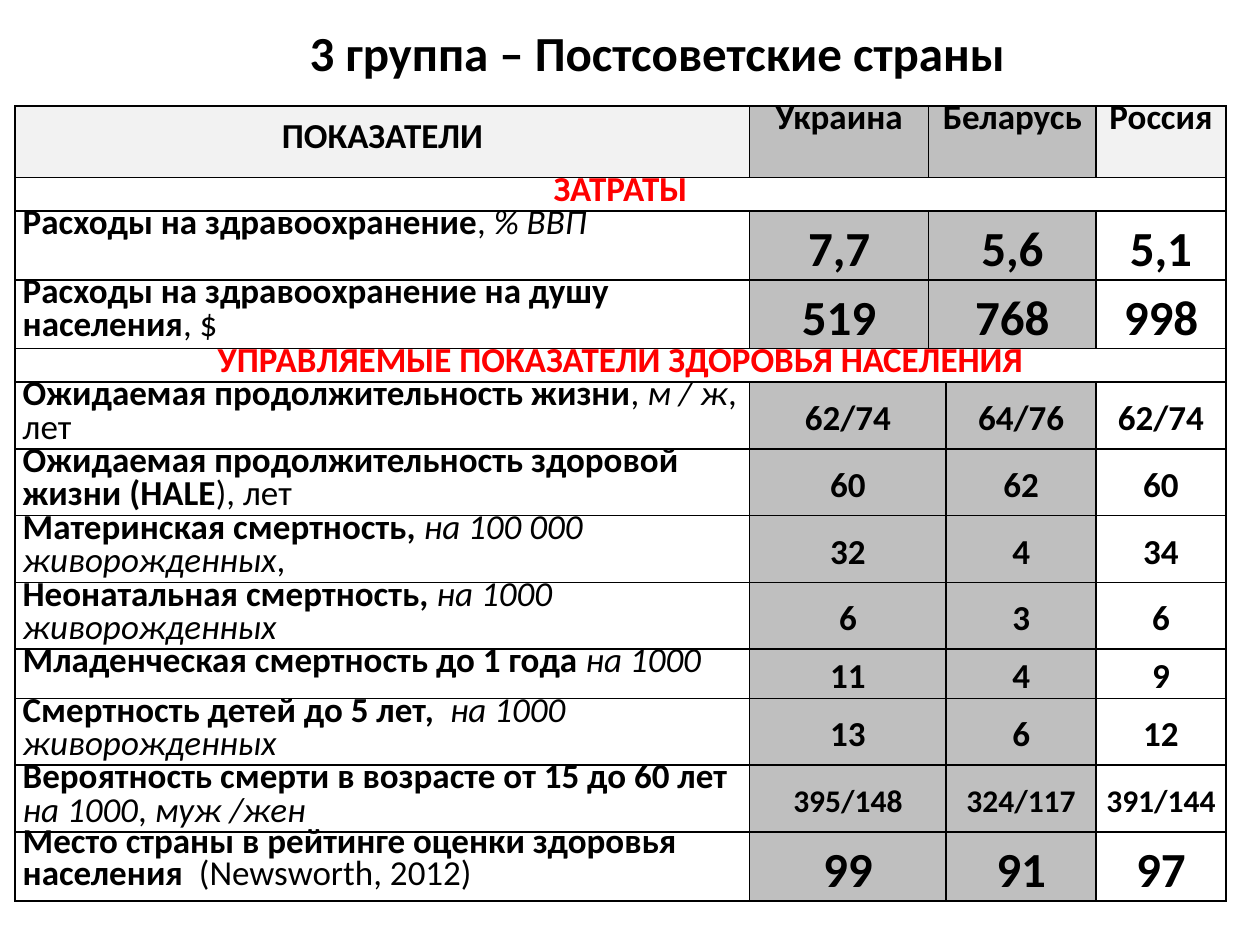
from lxml import etree
from pptx import Presentation
from pptx.dml.color import RGBColor
from pptx.enum.text import MSO_ANCHOR, PP_ALIGN
from pptx.oxml.ns import qn
from pptx.util import Inches, Pt

LEFT, MID = PP_ALIGN.LEFT, PP_ALIGN.CENTER
TOP, HALF = MSO_ANCHOR.TOP, MSO_ANCHOR.MIDDLE
BLACK = RGBColor(0, 0, 0)
RED = RGBColor(255, 0, 0)
WHITE = RGBColor(255, 255, 255)
PALE = RGBColor(0xF2, 0xF2, 0xF2)
GRAY = RGBColor(0xBF, 0xBF, 0xBF)
FILLS = (GRAY, GRAY, WHITE)
FACE = "Calibri"
COLS = (5.83, 1.42, 0.14, 1.19, 1.03)
HEADS = ("Украина", "Беларусь", "Россия")

COSTS = [
    (0.54, 28, [("Расходы на здравоохранение", "b"), (", ", ""), ("% ВВП", "i")],
     ("7,7", "5,6", "5,1")),
    (0.54, 28, [("Расходы на здравоохранение на душу населения", "b"), (", $", "")],
     ("519", "768", "998")),
]
HEALTH = [
    (0.53, 20, [("Ожидаемая продолжительность жизни", "b"), (", ", ""),
                ("м / ж", "i"), (", лет", "")],
     ("62/74", "64/76", "62/74")),
    (0.53, 20, [("Ожидаемая продолжительность здоровой жизни (HALE", "b"),
                ("), лет", "")],
     ("60", "62", "60")),
    (0.53, 20, [("Материнская смертность, ", "b"),
                ("на 100 000 живорожденных", "i"), (",", "")],
     ("32", "4", "34")),
    (0.53, 20, [("Неонатальная смертность, ", "b"), ("на 1000 живорожденных", "i")],
     ("6", "3", "6")),
    (0.38, 20, [("Младенческая смертность до 1 года ", "b"), ("на 1000", "i")],
     ("11", "4", "9")),
    (0.53, 20, [("Смертность детей до 5 лет,  ", "b"), ("на 1000 живорожденных", "i")],
     ("13", "6", "12")),
    (0.53, 18, [("Вероятность смерти в возрасте от 15 до 60 лет ", "b"),
                ("на 1000", "i"), (", ", ""), ("муж /жен", "i")],
     ("395/148", "324/117", "391/144")),
    (0.54, 28, [("Место страны в рейтинге оценки здоровья населения  ", "b"),
                ("(Newsworth, 2012)", "")],
     ("99", "91", "97")),
]


def style(font, size, color=BLACK):
    """Set the face, size and colour of a font."""
    font.name, font.size = FACE, Pt(size)
    font.color.rgb = color


def edge(cell):
    """Draw a thin black line on every side of a cell."""
    props = cell._tc.get_or_add_tcPr()
    for side in ("lnL", "lnR", "lnT", "lnB"):
        line = etree.SubElement(props, qn(f"a:{side}"), w=str(Pt(1)))
        fill = etree.SubElement(line, qn("a:solidFill"))
        etree.SubElement(fill, qn("a:srgbClr"), val=str(BLACK))


def write(cell, runs, size=20, color=BLACK, align=MID, space=Pt(19),
          anchor=TOP, pad=0.06):
    """Fill a cell with styled runs."""
    cell.margin_left = cell.margin_right = Inches(pad)
    cell.margin_top = cell.margin_bottom = 0
    cell.vertical_anchor = anchor
    para = cell.text_frame.paragraphs[0]
    para.alignment, para.line_spacing = align, space
    style(para.font, size, color)
    for text, kind in runs:
        run = para.add_run()
        run.text = text
        style(run.font, size, color)
        run.font.bold, run.font.italic = kind == "b", kind == "i"


def paint(cell, color):
    """Give a cell a solid fill."""
    cell.fill.solid()
    cell.fill.fore_color.rgb = color


def head(table):
    """Write the top row."""
    write(table.cell(0, 0), [("ПОКАЗАТЕЛИ", "b")], anchor=HALF)
    paint(table.cell(0, 0), PALE)
    table.cell(0, 2).merge(table.cell(0, 3))
    for col, text, color in zip((1, 2, 4), HEADS, (GRAY, GRAY, PALE)):
        write(table.cell(0, col), [(text, "b")])
        paint(table.cell(0, col), color)


def band(table, row, text):
    """Write a red heading across the whole table."""
    table.cell(row, 0).merge(table.cell(row, len(COLS) - 1))
    write(table.cell(row, 0), [(text, "b")], color=RED)


def block(table, start, data, spots, pair):
    """Write rows of a label and three values, joining a pair of columns."""
    for row, (_, size, label, values) in enumerate(data, start):
        space = Pt(18) if row == len(table.rows) - 1 else Pt(19)
        write(table.cell(row, 0), label, align=LEFT, space=space)
        table.cell(row, pair[0]).merge(table.cell(row, pair[1]))
        for col, text, color in zip(spots, values, FILLS):
            cell = table.cell(row, col)
            write(cell, [(text, "b")], size, space=1.15, anchor=HALF, pad=0.07)
            paint(cell, color)


def grid(slide):
    """Add the empty ruled table."""
    rows = [0.57, 0.26, *(r[0] for r in COSTS), 0.26, *(r[0] for r in HEALTH)]
    table = slide.shapes.add_table(
        len(rows), len(COLS), Inches(0.12), Inches(0.84),
        Inches(sum(COLS)), Inches(sum(rows))).table
    table.first_row = table.horz_banding = False
    for col, width in zip(table.columns, COLS):
        col.width = Inches(width)
    for row, height in zip(table.rows, rows):
        row.height = Inches(height)
    for cell in table.iter_cells():
        edge(cell)
        cell.fill.background()
    return table


def title(slide, text):
    """Place the slide title."""
    shape = slide.shapes.title
    shape.left, shape.top = Inches(0.43), Inches(0.13)
    shape.width, shape.height = Inches(9.57), Inches(0.57)
    shape.text_frame.text = text
    para = shape.text_frame.paragraphs[0]
    para.alignment = MID
    style(para.font, 28)
    para.font.bold = True


def main():
    """Build and save the slide."""
    deck = Presentation()
    deck.slide_width, deck.slide_height = Inches(10), Inches(7.5)
    slide = deck.slides.add_slide(deck.slide_layouts[5])
    title(slide, "3 группа – Постсоветские страны")
    table = grid(slide)
    head(table)
    band(table, 1, "ЗАТРАТЫ")
    block(table, 2, COSTS, (1, 2, 4), (2, 3))
    mid = 2 + len(COSTS)
    band(table, mid, "УПРАВЛЯЕМЫЕ ПОКАЗАТЕЛИ ЗДОРОВЬЯ НАСЕЛЕНИЯ")
    block(table, mid + 1, HEALTH, (1, 3, 4), (1, 2))
    deck.save("out.pptx")


if __name__ == "__main__":
    main()
